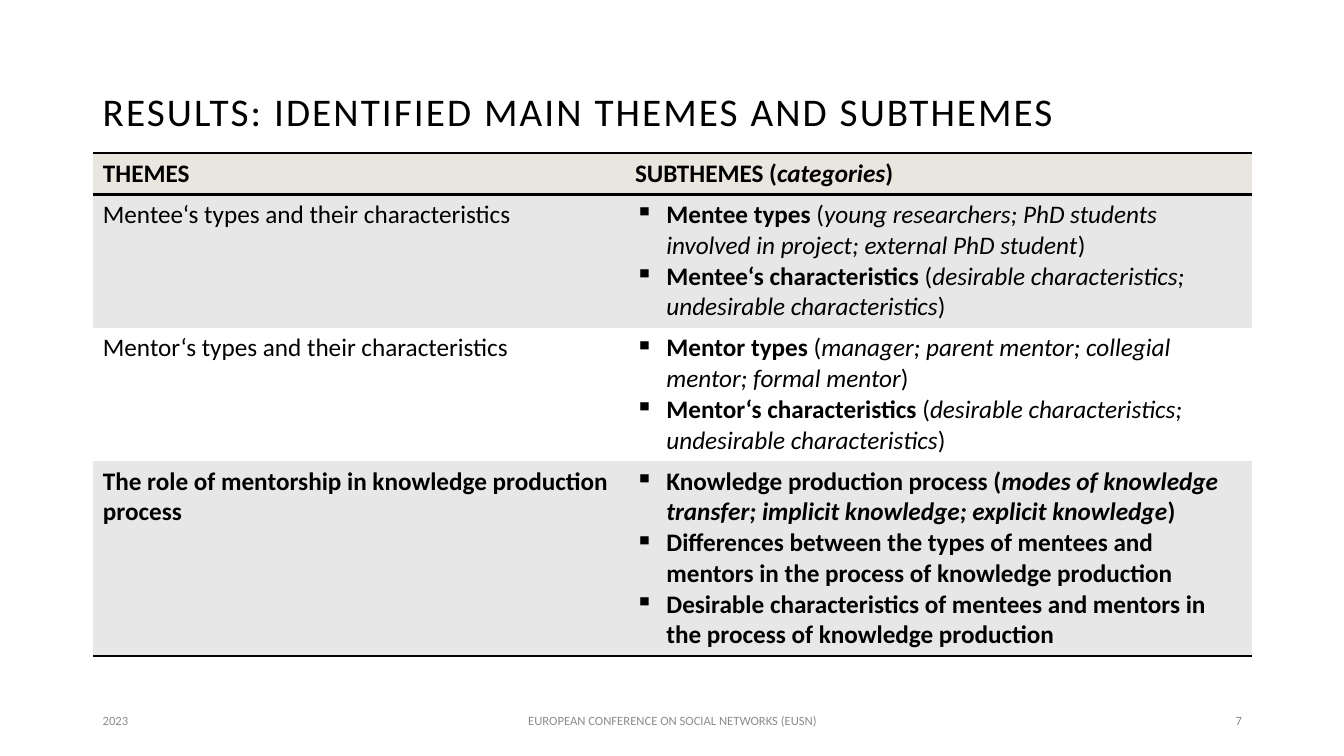
from dataclasses import dataclass

from lxml.etree import SubElement
from pptx import Presentation
from pptx.dml.color import RGBColor
from pptx.enum.text import MSO_ANCHOR as Anchor, PP_ALIGN as Align
from pptx.oxml.ns import qn
from pptx.slide import Slide
from pptx.table import _Cell as Cell
from pptx.text.text import Font, _Paragraph as Paragraph
from pptx.util import Cm, Pt


@dataclass(frozen=True)
class Theme:
    font: str = "Calibri"
    ink: str = "000000"
    footer_ink: str = "8C8C8C"
    header_fill: str = "E9E6DF"
    band_fill: str = "E7E7E7"
    plain_fill: str = "FFFFFF"
    title_size: float = 28
    table_size: float = 18
    footer_size: float = 9
    rule_width: float = 2


@dataclass(frozen=True)
class Span:
    text: str
    bold: bool = False
    italic: bool = False


@dataclass(frozen=True)
class ThemeRow:
    height: float
    fill: str
    theme: Span
    subthemes: list[list[Span]]
    bulleted: bool = True
    rules: tuple[str, ...] = ()


@dataclass(frozen=True)
class Label:
    text: str
    left: float
    top: float
    width: float
    height: float
    size: float
    color: str
    align: Align = Align.LEFT
    line_spacing: float = 1.0
    tracking: int = 0


THEME = Theme()
LEFT, WIDTH = 2.34, 29.21
TABLE_TOP = 3.86
COLUMN_WIDTHS = (13.41, 15.8)
BULLET_INDENT = 0.79
FOOTER_TOP, FOOTER_HEIGHT = 17.65, 1.02
NO_STYLE = "{2D5ABB26-0587-4C30-8999-92F81FD0307C}"


def subtheme(name: str, categories: str, ending: str = ")", bold: bool = False) -> list[Span]:
    return [
        Span(name, bold=True),
        Span(" (", bold),
        Span(categories, bold, italic=True),
        Span(ending, bold, italic=len(ending) == 0),
    ] if ending else [
        Span(name, bold=True),
        Span(" (", bold),
        Span(categories, bold, italic=True),
    ]


def subtheme_spans(name: str, categories: str, bold: bool = False) -> list[Span]:
    return [Span(name, True), Span(" (", bold), Span(categories, bold, True), Span(")", bold)]


CHARACTERISTICS = "desirable characteristics; undesirable characteristics"
ROWS = [
    ThemeRow(1.04, THEME.header_fill, Span("THEMES", True),
             [subtheme_spans("SUBTHEMES", "categories", True)],
             bulleted=False, rules=("a:lnT", "a:lnB")),
    ThemeRow(3.36, THEME.band_fill, Span("Mentee‘s types and their characteristics"),
             [subtheme_spans("Mentee types",
                             "young researchers; PhD students involved in project; external PhD student"),
              subtheme_spans("Mentee‘s characteristics", CHARACTERISTICS)]),
    ThemeRow(3.36, THEME.plain_fill, Span("Mentor‘s types and their characteristics"),
             [subtheme_spans("Mentor types",
                             "manager; parent mentor; collegial mentor; formal mentor"),
              subtheme_spans("Mentor‘s characteristics", CHARACTERISTICS)]),
    ThemeRow(4.91, THEME.band_fill,
             Span("The role of mentorship in knowledge production process", True),
             [subtheme_spans("Knowledge production process",
                             "modes of knowledge transfer; implicit knowledge; explicit knowledge", True),
              [Span("Differences between the types of mentees and mentors "
                    "in the process of knowledge production", True)],
              [Span("Desirable characteristics of mentees and mentors "
                    "in the process of knowledge production", True)]],
             rules=("a:lnB",)),
]
LABELS = [
    Label("RESULTS: IDENTIFIED MAIN THEMES AND SUBTHEMES", LEFT, 1.02, WIDTH, 3.68,
          THEME.title_size, THEME.ink, line_spacing=0.9, tracking=150),
    Label("2023", LEFT, FOOTER_TOP, 7.62, FOOTER_HEIGHT, THEME.footer_size, THEME.footer_ink),
    Label("EUROPEAN CONFERENCE ON SOCIAL NETWORKS (EUSN)", 11.23, FOOTER_TOP, 11.43,
          FOOTER_HEIGHT, THEME.footer_size, THEME.footer_ink, Align.CENTER),
    Label("7", 23.93, FOOTER_TOP, 7.62, FOOTER_HEIGHT, THEME.footer_size,
          THEME.footer_ink, Align.RIGHT),
]


def set_font(font: Font, size: float, color: str) -> None:
    font.name = THEME.font
    font.size = Pt(size)
    font.color.rgb = RGBColor.from_string(color)


def add_label(page: Slide, label: Label) -> None:
    box = page.shapes.add_textbox(Cm(label.left), Cm(label.top), Cm(label.width), Cm(label.height))
    frame = box.text_frame
    frame.word_wrap = True
    frame.vertical_anchor = Anchor.MIDDLE
    para = frame.paragraphs[0]
    para.alignment = label.align
    para.line_spacing = label.line_spacing
    set_font(para.font, label.size, label.color)
    run = para.add_run()
    run.text = label.text
    if label.tracking:
        run._r.get_or_add_rPr().set("spc", str(label.tracking))


def add_bullet(para: Paragraph) -> None:
    properties = para._p.get_or_add_pPr()
    properties.set("marL", str(Cm(BULLET_INDENT)))
    properties.set("indent", str(-Cm(BULLET_INDENT)))
    SubElement(properties, qn("a:buChar"), char="▪")


def write_cell(cell: Cell, paragraphs: list[list[Span]], bulleted: bool) -> None:
    frame = cell.text_frame
    for index, spans in enumerate(paragraphs):
        para = frame.add_paragraph() if index else frame.paragraphs[0]
        if bulleted:
            add_bullet(para)
        set_font(para.font, THEME.table_size, THEME.ink)
        for span in spans:
            run = para.add_run()
            run.text = span.text
            run.font.bold = span.bold
            run.font.italic = span.italic


def paint_cell(cell: Cell, fill: str, rules: tuple[str, ...]) -> None:
    properties = cell._tc.get_or_add_tcPr()
    for rule in rules:
        line = SubElement(properties, qn(rule), w=str(Pt(THEME.rule_width)))
        SubElement(SubElement(line, qn("a:solidFill")), qn("a:srgbClr"), val=THEME.ink)
    cell.fill.solid()
    cell.fill.fore_color.rgb = RGBColor.from_string(fill)


def add_theme_table(page: Slide) -> None:
    height = sum(row.height for row in ROWS)
    table = page.shapes.add_table(len(ROWS), len(COLUMN_WIDTHS), Cm(LEFT), Cm(TABLE_TOP),
                                  Cm(WIDTH), Cm(height)).table
    table.horz_banding = False
    table._tbl.tblPr.find(qn("a:tableStyleId")).text = NO_STYLE
    for column, width in zip(table.columns, COLUMN_WIDTHS):
        column.width = Cm(width)
    for index, row in enumerate(ROWS):
        table.rows[index].height = Cm(row.height)
        theme_cell, subtheme_cell = table.rows[index].cells
        write_cell(theme_cell, [[row.theme]], False)
        write_cell(subtheme_cell, row.subthemes, row.bulleted)
        for cell in (theme_cell, subtheme_cell):
            paint_cell(cell, row.fill, row.rules)


def main() -> None:
    deck = Presentation()
    deck.slide_width, deck.slide_height = Cm(33.87), Cm(19.05)
    page = deck.slides.add_slide(deck.slide_layouts[6])
    for label in LABELS:
        add_label(page, label)
    add_theme_table(page)
    deck.save("out.pptx")


if __name__ == "__main__":
    main()
